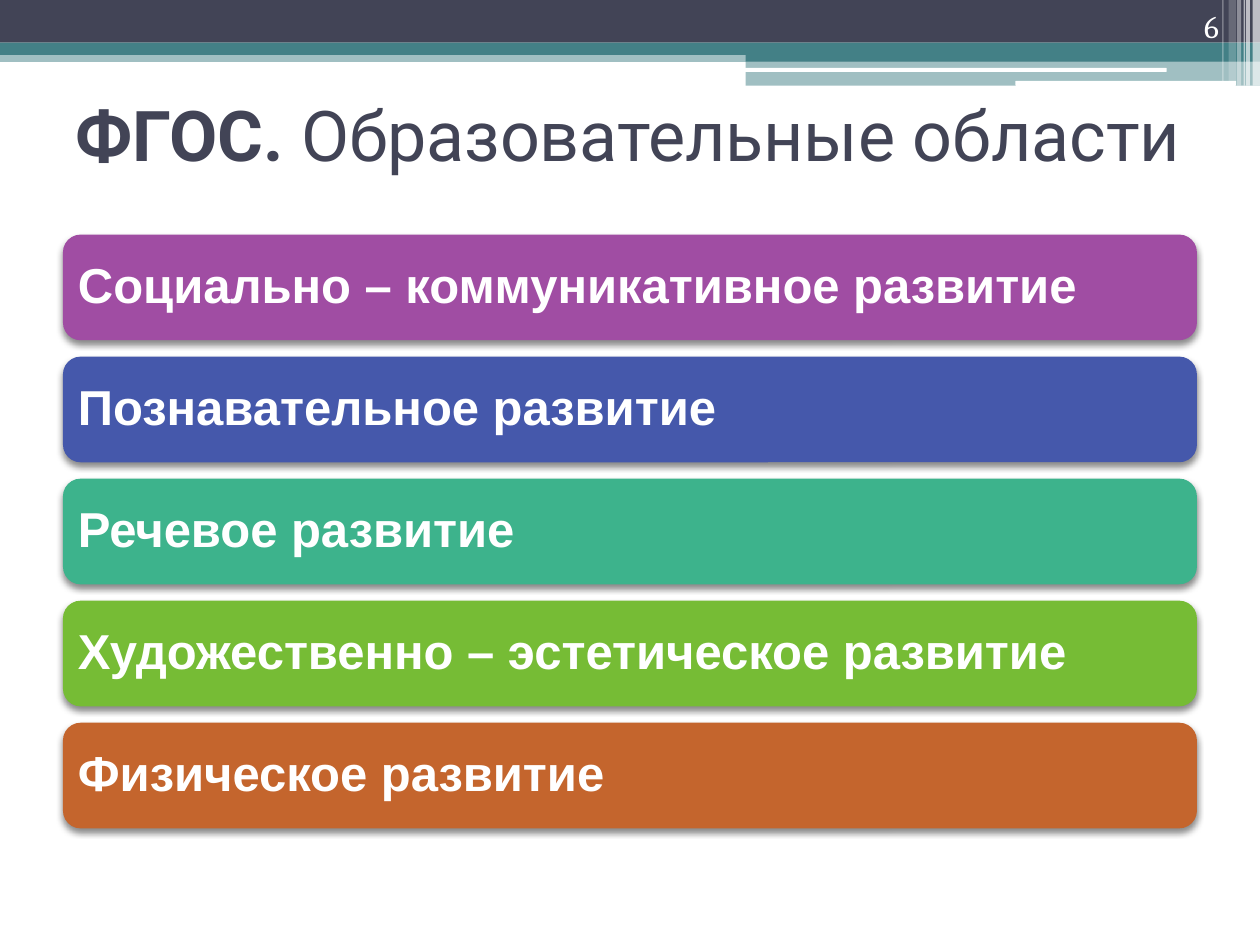
"""Build a slide that lists the five educational areas as coloured bars."""
from dataclasses import dataclass

from lxml.etree import SubElement
from pptx import Presentation
from pptx.dml.color import RGBColor
from pptx.enum.shapes import MSO_SHAPE as Preset
from pptx.enum.text import MSO_ANCHOR as Anchor, PP_ALIGN as Align
from pptx.oxml.ns import qn
from pptx.util import Cm, Pt


@dataclass(frozen=True)
class Theme:
    dark: str = "424456"
    teal: str = "438086"
    white: str = "FFFFFF"
    shadow: str = "000000"
    title_font: str = "Roboto"
    area_font: str = "Arial"
    number_font: str = "Cambria"
    title_size: int = 40
    area_size: int = 28
    number_size: int = 18


THEME = Theme()

HEADER_BANDS = [
    (Preset.RECTANGLE, 0, 1.02, 25.4, 0.23, THEME.teal, 50),
    (Preset.RECTANGLE, 0, 0, 25.4, 0.86, THEME.dark, 100),
    (Preset.RECTANGLE, 0, 0.86, 25.4, 0.25, THEME.teal, 100),
    (Preset.RECTANGLE, 15.03, 0.99, 10.37, 0.25, THEME.teal, 100),
    (Preset.RECTANGLE, 15.03, 1.23, 10.37, 0.5, THEME.teal, 50),
    (Preset.ROUNDED_RECTANGLE, 15.01, 1.37, 8.51, 0.08, THEME.white, 100),
    (Preset.ROUNDED_RECTANGLE, 20.47, 1.63, 4.45, 0.1, THEME.white, 100),
]

EDGE_STRIPES = [
    (25.25, 0.15, 1.73, 65),
    (25.12, 0.08, 1.73, 65),
    (25.07, 0.03, 1.73, 60),
    (24.94, 0.08, 1.73, 40),
    (24.77, 0.15, 1.63, 20),
    (24.64, 0.03, 1.63, 30),
]

AREAS = [
    ("Социально – коммуникативное развитие", "A04DA3"),
    ("Познавательное развитие", "4558AB"),
    ("Речевое развитие", "3DB38C"),
    ("Художественно – эстетическое развитие", "76BC35"),
    ("Физическое развитие", "C4652D"),
]
AREA_TOP = 4.73
AREA_PITCH = 2.46


def set_alpha(color_element, percent):
    """Give a colour element an opacity in percent."""
    SubElement(color_element, qn("a:alpha"), val=str(percent * 1000))


def add_block(slide, preset, left, top, width, height, color, opacity=100):
    """Add a filled preset shape with no line and no shadow."""
    shape = slide.shapes.add_shape(preset, Cm(left), Cm(top), Cm(width), Cm(height))
    shape.shadow.inherit = False
    shape.line.fill.background()
    shape.fill.solid()
    shape.fill.fore_color.rgb = RGBColor.from_string(color)
    if opacity < 100:
        set_alpha(shape._element.spPr.find(".//" + qn("a:srgbClr")), opacity)
    return shape


def add_drop_shadow(shape):
    """Add a soft shadow that falls straight down."""
    effects = shape._element.spPr.find(qn("a:effectLst"))
    shadow = SubElement(effects, qn("a:outerShdw"), blurRad=str(Pt(4)),
                        dist=str(Pt(2)), dir="5400000", rotWithShape="0")
    set_alpha(SubElement(shadow, qn("a:srgbClr"), val=THEME.shadow), 45)


def add_run(paragraph, text, font_name, size, color, bold=False):
    """Append a formatted run to a paragraph."""
    run = paragraph.add_run()
    run.text = text
    run.font.name = font_name
    run.font.size = Pt(size)
    run.font.bold = bold
    run.font.color.rgb = RGBColor.from_string(color)


def add_text_box(slide, left, top, width, height, anchor, align):
    """Add a wrapping text box and return its first paragraph."""
    box = slide.shapes.add_textbox(Cm(left), Cm(top), Cm(width), Cm(height))
    box.text_frame.word_wrap = True
    box.text_frame.vertical_anchor = anchor
    paragraph = box.text_frame.paragraphs[0]
    paragraph.alignment = align
    return paragraph


def add_header(slide):
    """Draw the header bands and the pale stripes at the right edge."""
    for band in HEADER_BANDS:
        add_block(slide, *band)
    for left, width, height, opacity in EDGE_STRIPES:
        add_block(slide, Preset.RECTANGLE, left, 0, width, height, THEME.white, opacity)


def add_title(slide):
    """Add the title with its bold opening word."""
    paragraph = add_text_box(slide, 1.27, 1.73, 22.86, 2.87, Anchor.TOP, Align.LEFT)
    for text, bold in (("ФГОС. ", True), ("Образовательные области", False)):
        add_run(paragraph, text, THEME.title_font, THEME.title_size, THEME.dark, bold)


def add_area(slide, top, text, color):
    """Add one rounded bar that names an educational area."""
    bar = add_block(slide, Preset.ROUNDED_RECTANGLE, 1.27, top, 22.86, 2.13, color)
    add_drop_shadow(bar)
    frame = bar.text_frame
    frame.word_wrap = True
    frame.vertical_anchor = Anchor.MIDDLE
    frame.margin_left = frame.margin_right = Cm(0.2)
    frame.margin_top = frame.margin_bottom = Cm(0.2)
    paragraph = frame.paragraphs[0]
    paragraph.alignment = Align.LEFT
    paragraph.line_spacing = 0.9
    add_run(paragraph, text, THEME.area_font, THEME.area_size, THEME.white, True)


def add_slide_number(slide):
    """Add the slide number in the header."""
    paragraph = add_text_box(slide, 22.71, 0, 2.11, 1.02, Anchor.BOTTOM, Align.RIGHT)
    add_run(paragraph, "6", THEME.number_font, THEME.number_size, THEME.white)


def main():
    """Build and save the presentation."""
    presentation = Presentation()
    presentation.slide_width = Cm(25.4)
    presentation.slide_height = Cm(19.05)
    slide = presentation.slides.add_slide(presentation.slide_layouts[6])
    add_header(slide)
    add_title(slide)
    for index, (text, color) in enumerate(AREAS):
        add_area(slide, AREA_TOP + index * AREA_PITCH, text, color)
    add_slide_number(slide)
    presentation.save("out.pptx")


if __name__ == "__main__":
    main()
